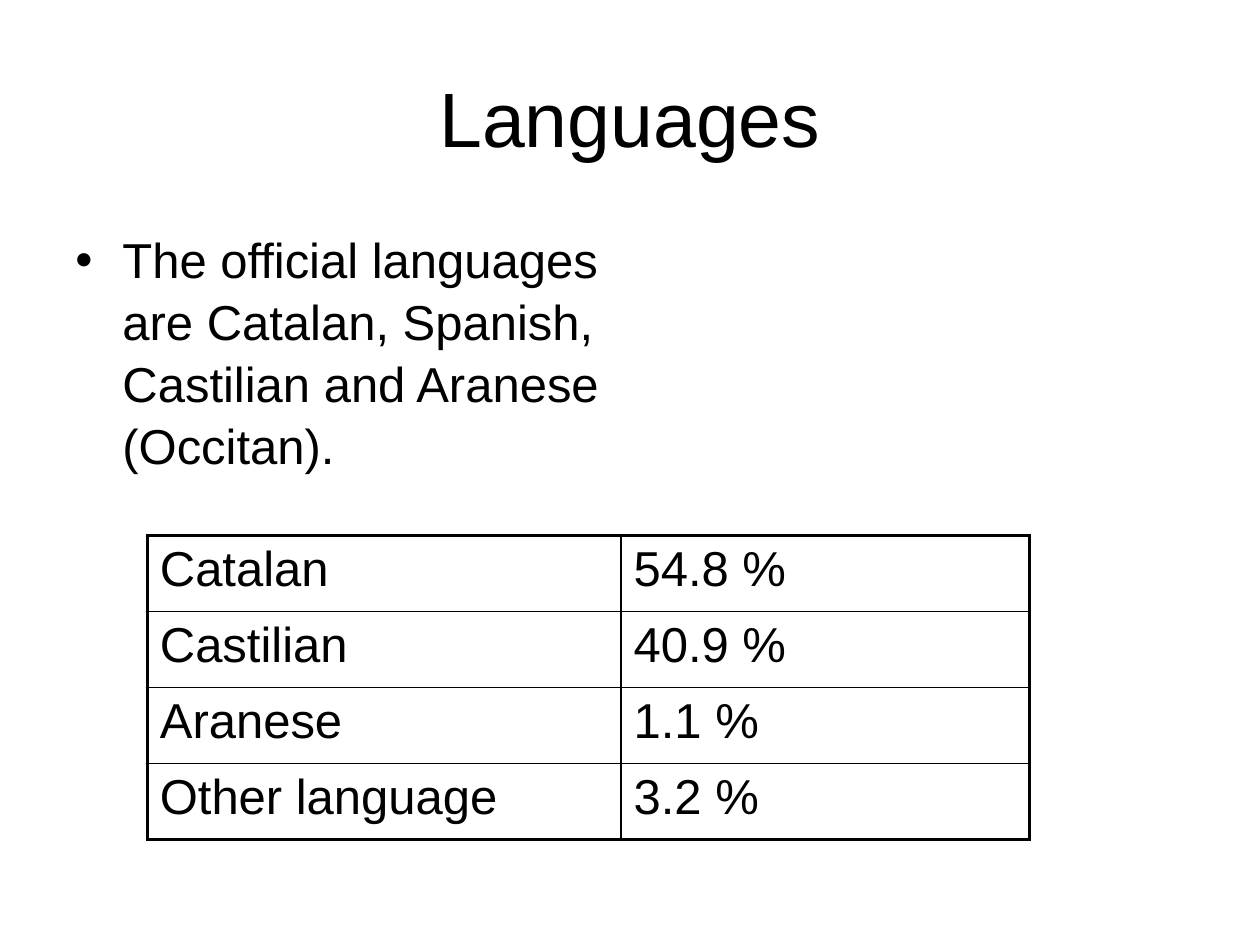
from lxml import etree
from pptx import Presentation
from pptx.dml.color import RGBColor
from pptx.enum.text import MSO_ANCHOR, PP_ALIGN
from pptx.oxml.ns import qn
from pptx.util import Cm, Pt

CENTER = PP_ALIGN.CENTER
LEFT = PP_ALIGN.LEFT
MIDDLE = MSO_ANCHOR.MIDDLE
TOP = MSO_ANCHOR.TOP

FONT = "Arial"
INK = "000000"
OUTER_WIDTH = 2.25
INNER_WIDTH = 1
LANGUAGE_SHARES = [
    ("Catalan", "54.8 %"),
    ("Castilian", "40.9 %"),
    ("Aranese", "1.1 %"),
    ("Other language", "3.2 %"),
]


def color(value):
    return RGBColor.from_string(value)


def add_bullet(paragraph, indent):
    properties = paragraph._p.get_or_add_pPr()
    properties.set("marL", str(indent))
    properties.set("indent", str(-indent))
    etree.SubElement(properties, qn("a:buFont"), typeface=FONT)
    etree.SubElement(properties, qn("a:buChar"), char="•")


def write_text(frame, text, size=28, align=LEFT, anchor=TOP, bullet_indent=None, spacing=None):
    frame.word_wrap = True
    frame.vertical_anchor = anchor
    paragraph = frame.paragraphs[0]
    if bullet_indent:
        add_bullet(paragraph, bullet_indent)
    paragraph.alignment = align
    paragraph.line_spacing = spacing
    run = paragraph.add_run()
    run.text = text
    run.font.name = FONT
    run.font.size = Pt(size)
    run.font.color.rgb = color(INK)


def add_text(slide, left, top, width, height, text, **text_format):
    box = slide.shapes.add_textbox(Cm(left), Cm(top), Cm(width), Cm(height))
    write_text(box.text_frame, text, **text_format)


def add_border(cell, side, width):
    properties = cell._tc.get_or_add_tcPr()
    line = etree.SubElement(properties, qn(f"a:{side}"), w=str(Pt(width)))
    fill = etree.SubElement(line, qn("a:solidFill"))
    etree.SubElement(fill, qn("a:srgbClr"), val=INK)


def add_share_table(slide, left, top, column_widths, row_height, shares):
    rows, columns = len(shares), len(column_widths)
    table = slide.shapes.add_table(
        rows, columns, Cm(left), Cm(top), Cm(sum(column_widths)), Cm(row_height * rows)
    ).table
    table.first_row = False
    table.horz_banding = False
    for column, width in zip(table.columns, column_widths):
        column.width = Cm(width)
    for row_index, share in enumerate(shares):
        table.rows[row_index].height = Cm(row_height)
        for column_index, text in enumerate(share):
            cell = table.cell(row_index, column_index)
            write_text(cell.text_frame, text)
            outer_sides = {
                "lnL": column_index == 0,
                "lnR": column_index == columns - 1,
                "lnT": row_index == 0,
                "lnB": row_index == rows - 1,
            }
            for side, is_outer in outer_sides.items():
                add_border(cell, side, OUTER_WIDTH if is_outer else INNER_WIDTH)
            cell.fill.background()


def main():
    presentation = Presentation()
    presentation.slide_width = Cm(25.4)
    presentation.slide_height = Cm(19.05)
    slide = presentation.slides.add_slide(presentation.slide_layouts[6])
    add_text(slide, 1.27, 0.76, 22.86, 3.18, "Languages", size=44, align=CENTER, anchor=MIDDLE)
    add_text(
        slide, 1.27, 4.45, 11.23, 12.57,
        "The official languages are Catalan, Spanish, Castilian and Aranese (Occitan).",
        bullet_indent=Cm(0.95), spacing=1.05,
    )
    add_share_table(slide, 2.97, 10.8, [9.55, 8.23], 1.53, LANGUAGE_SHARES)
    presentation.save("out.pptx")


if __name__ == "__main__":
    main()
